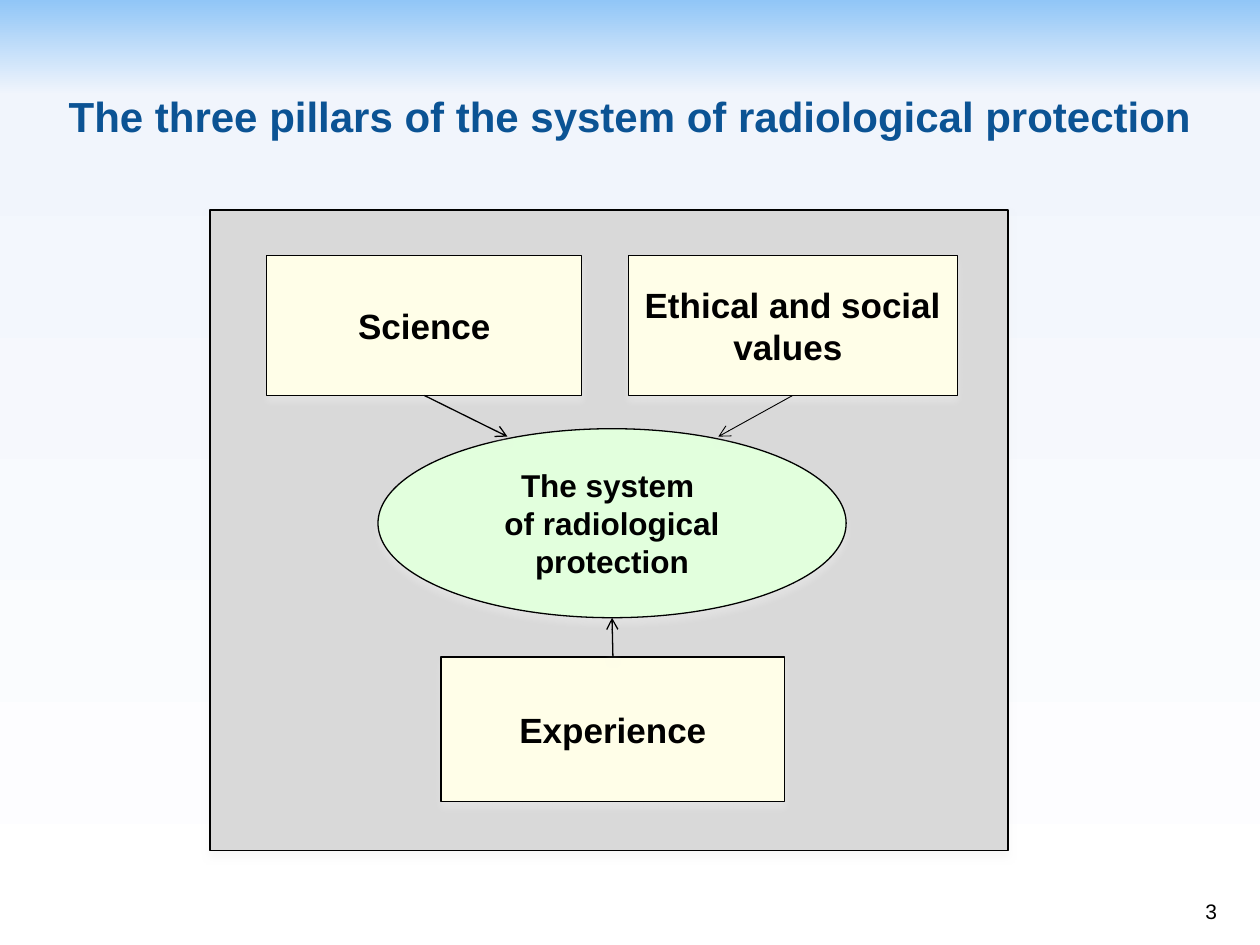
from pptx import Presentation
from pptx.dml.color import RGBColor
from pptx.enum.shapes import MSO_CONNECTOR, MSO_SHAPE
from pptx.enum.text import MSO_ANCHOR, MSO_AUTO_SIZE, PP_ALIGN
from pptx.oxml import parse_xml
from pptx.oxml.ns import nsdecls, qn
from pptx.util import Pt

BLACK = RGBColor(0x00, 0x00, 0x00)
TITLE_BLUE = RGBColor(0x0B, 0x53, 0x94)
PANEL_GREY = RGBColor(0xD9, 0xD9, 0xD9)
PILLAR_CREAM = RGBColor(0xFF, 0xFE, 0xE8)
SYSTEM_GREEN = RGBColor(0xE2, 0xFF, 0xDD)
SHADOW = RGBColor(0xEE, 0xEE, 0xEE)
SKY_STOPS = [(0, RGBColor(0x91, 0xC6, 0xF7)),
             (10, RGBColor(0xF1, 0xF5, 0xFC)),
             (100, RGBColor(0xFF, 0xFF, 0xFF))]
BOTTOM_SITE = 2
TOP_SITE = 0


def set_background(s):
    fill = s.background.fill
    fill.gradient()
    fill.gradient_angle = 270
    stops = "".join(f'<a:gs pos="{pos * 1000}"><a:srgbClr val="{color}"/></a:gs>'
                    for pos, color in SKY_STOPS)
    old = s.background._cSld.find(".//" + qn("a:gsLst"))
    new = parse_xml(f'<a:gsLst {nsdecls("a")}>{stops}</a:gsLst>')
    old.getparent().replace(old, new)


def write_text(sp, lines, size, color=BLACK, bold=True,
               align=PP_ALIGN.CENTER, anchor=MSO_ANCHOR.MIDDLE):
    tf = sp.text_frame
    frame_format = {"word_wrap": True, "auto_size": MSO_AUTO_SIZE.NONE,
                    "vertical_anchor": anchor}
    for name, value in frame_format.items():
        setattr(tf, name, value)
    for i, line in enumerate(lines):
        p = tf.paragraphs[0] if i == 0 else tf.add_paragraph()
        p.alignment = align
        r = p.add_run()
        r.text = line
        for name, value in {"name": "Arial", "size": Pt(size), "bold": bold}.items():
            setattr(r.font, name, value)
        r.font.color.rgb = color


def add_shadow(sp):
    # Soft glow just below the element
    spPr = sp._element.spPr
    for old in spPr.findall(qn("a:effectLst")):
        spPr.remove(old)
    spPr.append(parse_xml(
        f'<a:effectLst {nsdecls("a")}>'
        f'<a:outerShdw blurRad="{Pt(4.5)}" dist="{Pt(3)}" dir="5400000" rotWithShape="0">'
        f'<a:srgbClr val="{SHADOW}"><a:alpha val="48000"/></a:srgbClr>'
        f'</a:outerShdw></a:effectLst>'))


def add_block(group, kind, box, color, lines=(), size=20):
    sp = group.shapes.add_shape(kind, *map(Pt, box))
    sp.fill.solid()
    sp.fill.fore_color.rgb = color
    sp.line.color.rgb = BLACK
    sp.line.width = Pt(0.75)
    add_shadow(sp)
    write_text(sp, lines, size)
    return sp


def add_arrow(group, source, site, end, width=0.75):
    x, y = map(Pt, end)
    cn = group.shapes.add_connector(MSO_CONNECTOR.STRAIGHT, x, y, x, y)
    cn.begin_connect(source, site)
    cn.line.color.rgb = BLACK
    cn.line.width = Pt(width)
    cn.line._get_or_add_ln().append(
        parse_xml(f'<a:tailEnd {nsdecls("a")} type="arrow"/>'))
    add_shadow(cn)


def add_title(s, text):
    sp = s.shapes.title
    place = {"left": Pt(0), "top": Pt(30), "width": Pt(720), "height": Pt(72)}
    for name, value in place.items():
        setattr(sp, name, value)
    write_text(sp, [text], 24, TITLE_BLUE)


def add_page_number(s, number):
    sp = s.shapes.add_textbox(Pt(553), Pt(495.5), Pt(149.5), Pt(36))
    write_text(sp, [number], 12, bold=False,
               align=PP_ALIGN.RIGHT, anchor=MSO_ANCHOR.BOTTOM)


def add_diagram(s):
    group = s.shapes.add_group_shape()
    # Grey panel
    add_block(group, MSO_SHAPE.RECTANGLE, (120, 120, 456, 366), PANEL_GREY)
    # Three pillars
    pillars = [
        ("Science", (152.5, 146, 180, 80)),
        ("Experience", (252, 375.5, 196.5, 82.5)),
        ("Ethical and social values ", (359, 146, 188, 80)),
    ]
    science, experience, values = [
        add_block(group, MSO_SHAPE.RECTANGLE, box, PILLAR_CREAM, [label])
        for label, box in pillars]
    # System at the centre
    add_block(group, MSO_SHAPE.OVAL, (216, 245, 267.5, 108), SYSTEM_GREEN,
              ["The system ", "of radiological protection"], 18)
    # Arrows from the pillars to the system
    add_arrow(group, science, BOTTOM_SITE, (290, 249.5))
    add_arrow(group, values, BOTTOM_SITE, (410.5, 249.5), 0.5)
    add_arrow(group, experience, TOP_SITE, (349.75, 353))


def main():
    prs = Presentation()
    prs.slide_width, prs.slide_height = Pt(720), Pt(540)
    s = prs.slides.add_slide(prs.slide_layouts[5])
    set_background(s)
    add_title(s, "The three pillars of the system of radiological protection")
    add_diagram(s)
    add_page_number(s, "3")
    prs.save("out.pptx")


if __name__ == "__main__":
    main()
